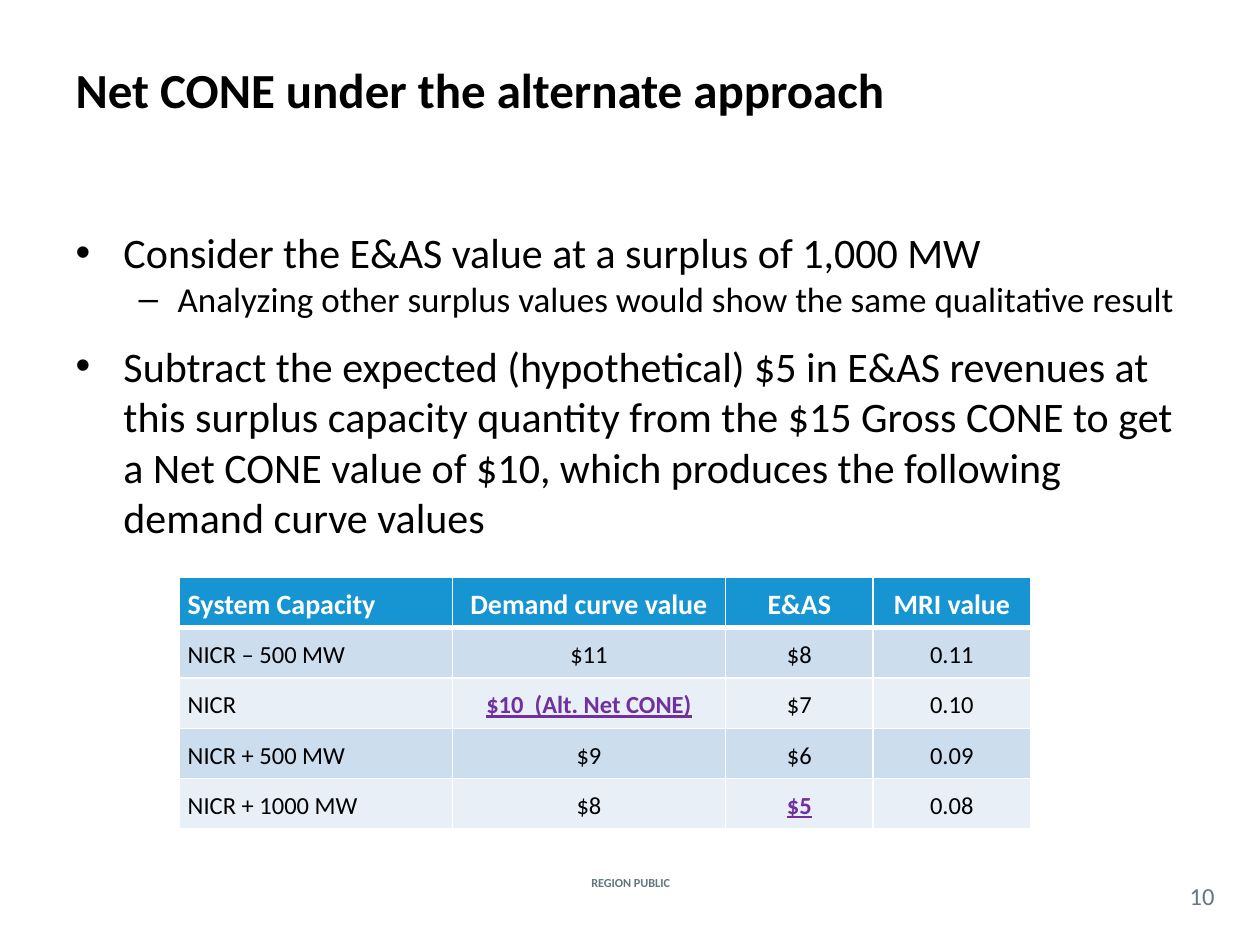
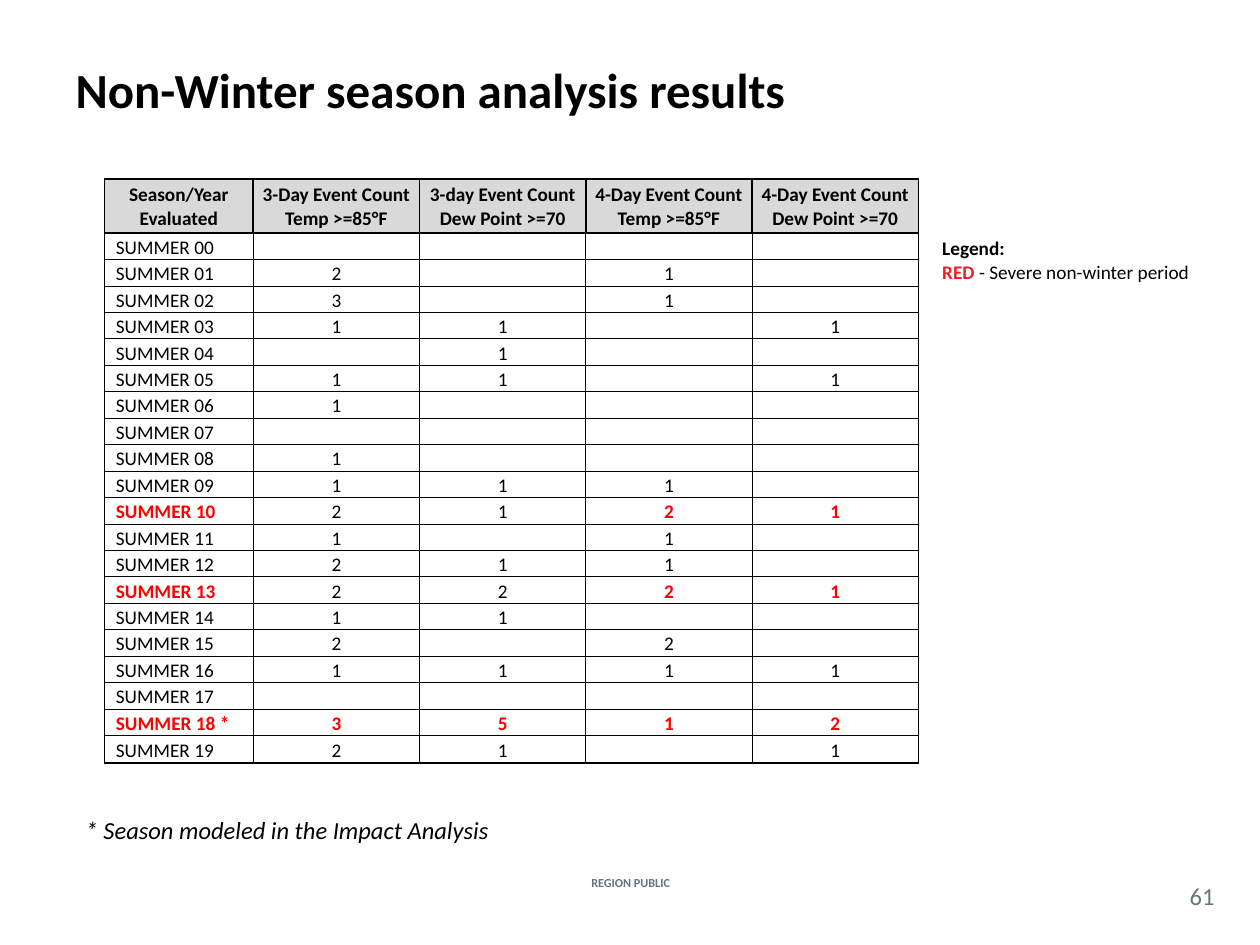
from lxml.etree import SubElement
from pptx import Presentation
from pptx.dml.color import RGBColor
from pptx.enum.text import MSO_ANCHOR, MSO_AUTO_SIZE, PP_ALIGN
from pptx.oxml.ns import qn
from pptx.util import Inches, Pt

BLACK = RGBColor(0x00, 0x00, 0x00)
WHITE = RGBColor(0xFF, 0xFF, 0xFF)
SLATE = RGBColor(0x62, 0x77, 0x7F)
HEADER_BLUE = RGBColor(0x17, 0x95, 0xD2)
BAND_DARK = RGBColor(0xCC, 0xDD, 0xEE)
BAND_LIGHT = RGBColor(0xE8, 0xEF, 0xF7)
PURPLE = RGBColor(0x70, 0x30, 0xA0)
HEADER_GRAY = RGBColor(0xD9, 0xD9, 0xD9)
RED = RGBColor(0xFF, 0x00, 0x00)
LEGEND_RED = RGBColor(0xEC, 0x1F, 0x25)

FONT = "Calibri"
LEFT, CENTER = PP_ALIGN.LEFT, PP_ALIGN.CENTER


def write(paragraph, text, size, color=BLACK, align=LEFT, **formats):
    paragraph.alignment = align
    for index, line in enumerate(text.split("\n")):
        if index:
            paragraph.add_line_break()
        run = paragraph.add_run()
        run.text = line
        run.font.color.rgb = color
        settings = {"name": FONT, "size": Pt(size), "bold": False, **formats}
        for name, value in settings.items():
            setattr(run.font, name, value)


def style_cell(cell, margins, anchor, color, borders, fill=None):
    sides = ("left", "top", "right", "bottom")
    for side, margin in zip(sides, margins):
        setattr(cell, f"margin_{side}", Inches(margin))
    cell.vertical_anchor = anchor
    properties = cell._tc.get_or_add_tcPr()
    for side, width in zip("LRTB", borders):
        line = SubElement(properties, qn(f"a:ln{side}"), w=str(Pt(width)))
        solid = SubElement(line, qn("a:solidFill"))
        SubElement(solid, qn("a:srgbClr"), val=str(color))
    if fill is None:
        cell.fill.background()
    else:
        cell.fill.solid()
        cell.fill.fore_color.rgb = fill


presentation = Presentation()
presentation.slide_width = Inches(10)
presentation.slide_height = Inches(7.5)

slides = []
for title_text, number, body_box in (
    ("Net CONE under the alternate approach", "10", (0.5, 1.75, 9, 5.08)),
    ("Non-Winter season analysis results", "61", (0.58, 6.42, 9, 0.42)),
):
    slide = presentation.slides.add_slide(presentation.slide_layouts[1])
    slides.append(slide)
    title, body = slide.shapes.title, slide.placeholders[1]
    for shape, box in ((title, (0.5, 0.08, 9, 1.25)), (body, body_box)):
        shape.left, shape.top, shape.width, shape.height = map(Inches, box)
        shape.text_frame.auto_size = MSO_AUTO_SIZE.NONE
    title.text_frame.vertical_anchor = MSO_ANCHOR.MIDDLE
    write(title.text_frame.paragraphs[0], title_text, 28, bold=True)

    for box, text, size, bold in (
        ((4.27, 6.92, 1.47, 0.17), "REGION PUBLIC", 7, True),
        ((9.33, 6.96, 0.42, 0.29), number, 14, False),
    ):
        frame = slide.shapes.add_textbox(*map(Inches, box)).text_frame
        frame.word_wrap = True
        frame.vertical_anchor = MSO_ANCHOR.MIDDLE
        for side in ("left", "top", "right", "bottom"):
            setattr(frame, f"margin_{side}", 0)
        write(frame.paragraphs[0], text, size, SLATE, CENTER, bold=bold)

cone_slide, season_slide = slides

points = [
    (0, "Consider the E&AS value at a surplus of 1,000 MW"),
    (1, "Analyzing other surplus values would show the same qualitative result"),
    (0, "Subtract the expected (hypothetical) $5 in E&AS revenues at this surplus "
        "capacity quantity from the $15 Gross CONE to get a Net CONE value of $10, "
        "which produces the following demand curve values"),
]
level_styles = [("•", 0.38, -0.38, 24, 12), ("–", 0.81, -0.31, 20, 0)]
frame = cone_slide.placeholders[1].text_frame
for index, (level, text) in enumerate(points):
    bullet, margin, indent, size, space = level_styles[level]
    paragraph = frame.add_paragraph() if index else frame.paragraphs[0]
    paragraph.level = level
    paragraph.space_before = Pt(space if index else 0)
    properties = paragraph._p.get_or_add_pPr()
    properties.set("marL", str(Inches(margin)))
    properties.set("indent", str(Inches(indent)))
    SubElement(properties, qn("a:buFont"), typeface="Arial")
    SubElement(properties, qn("a:buChar"), char=bullet)
    write(paragraph, text, size)

cone_rows = [
    ("System Capacity", "Demand curve value", "E&AS", "MRI value"),
    ("NICR – 500 MW", "$11", "$8", "0.11"),
    ("NICR", "$10  (Alt. Net CONE)", "$7", "0.10"),
    ("NICR + 500 MW", "$9", "$6", "0.09"),
    ("NICR + 1000 MW", "$8", "$5", "0.08"),
]
highlights = {(2, 1), (4, 2)}
cone_table = cone_slide.shapes.add_table(
    5, 4, Inches(1.42), Inches(4.58), Inches(6.76), Inches(2)).table
cone_table.first_row = cone_table.horz_banding = False
for column, width in zip(cone_table.columns, (2.17, 2.17, 1.17, 1.25)):
    column.width = Inches(width)
for row, values in enumerate(cone_rows):
    cone_table.rows[row].height = Inches(0.4)
    fill = (BAND_DARK if row % 2 else BAND_LIGHT) if row else HEADER_BLUE
    borders = (1, 1, 3 if row == 1 else 1, 1 if row else 3)
    for column, text in enumerate(values):
        cell = cone_table.cell(row, column)
        style_cell(cell, (0.07, 0, 0.07, 0), MSO_ANCHOR.MIDDLE, WHITE, borders, fill)
        marked = (row, column) in highlights
        color = PURPLE if marked else BLACK if row else WHITE
        paragraph = cell.text_frame.paragraphs[0]
        paragraph.line_spacing = 1.15
        write(paragraph, text, 14 if row else 16, color, CENTER if column else LEFT,
              bold=marked or row == 0, underline=marked)

season_headers = (
    "Season/Year\nEvaluated",
    "3-Day Event Count\nTemp >=85°F",
    "3-day Event Count\nDew Point >=70",
    "4-Day Event Count\nTemp >=85°F",
    "4-Day Event Count\nDew Point >=70",
)
event_counts = [
    ("", "", "", ""), ("2", "", "1", ""), ("3", "", "1", ""), ("1", "1", "", "1"),
    ("", "1", "", ""), ("1", "1", "", "1"), ("1", "", "", ""), ("", "", "", ""),
    ("1", "", "", ""), ("1", "1", "1", ""), ("2", "1", "2", "1"), ("1", "", "1", ""),
    ("2", "1", "1", ""), ("2", "2", "2", "1"), ("1", "1", "", ""), ("2", "", "2", ""),
    ("1", "1", "1", "1"), ("", "", "", ""), ("3", "5", "1", "2"), ("2", "1", "", "1"),
]
severe_years = (10, 13, 18)
modeled_year = 18
season_rows = [season_headers]
for year, counts in enumerate(event_counts):
    mark = " *" if year == modeled_year else ""
    season_rows.append((f"SUMMER {year:02}{mark}", *counts))

last_row = len(season_rows) - 1
season_table = season_slide.shapes.add_table(
    len(season_rows), 5, Inches(0.83), Inches(1.42), Inches(6.46), Inches(4.6)).table
season_table.first_row = season_table.horz_banding = False
for index, column in enumerate(season_table.columns):
    column.width = Inches(1.32 if index else 1.18)
for row, values in enumerate(season_rows):
    header = row == 0
    year = row - 1
    season_table.rows[row].height = Inches(
        0.43 if header else 0.22 if row == last_row else 0.21)
    for column, text in enumerate(values):
        cell = season_table.cell(row, column)
        label = column == 0 and not header
        borders = (
            1 if header or column == 0 else 0.5,
            1 if header else 0.5,
            1 if row <= 1 else 0.5,
            1 if row in (0, last_row) else 0.5,
        )
        style_cell(cell, (0.09 if label else 0.01, 0.01, 0.01, 0),
                   MSO_ANCHOR.MIDDLE if header else MSO_ANCHOR.BOTTOM,
                   BLACK, borders, HEADER_GRAY if header else None)
        severe = year in severe_years and (column in (0, 3, 4) or year == modeled_year)
        paragraph = cell.text_frame.paragraphs[0]
        if text:
            write(paragraph, text, 11, RED if severe else BLACK,
                  LEFT if label else CENTER, bold=header or severe)
        else:
            SubElement(paragraph._p, qn("a:endParaRPr"), sz="1100")

note = season_slide.placeholders[1].text_frame.paragraphs[0]
note.space_before = Pt(0)
properties = note._p.get_or_add_pPr()
properties.set("marL", "0")
properties.set("indent", "0")
SubElement(properties, qn("a:buNone"))
write(note, "* Season modeled in the Impact Analysis", 14, italic=True)

legend = season_slide.shapes.add_textbox(
    Inches(7.38), Inches(1.83), Inches(2.17), Inches(0.47)).text_frame
legend.word_wrap = True
write(legend.paragraphs[0], "Legend:", 11, bold=True)
legend_entry = legend.add_paragraph()
write(legend_entry, "RED ", 11, LEGEND_RED, bold=True)
write(legend_entry, "- Severe non-winter period", 11)

presentation.save("out.pptx")
